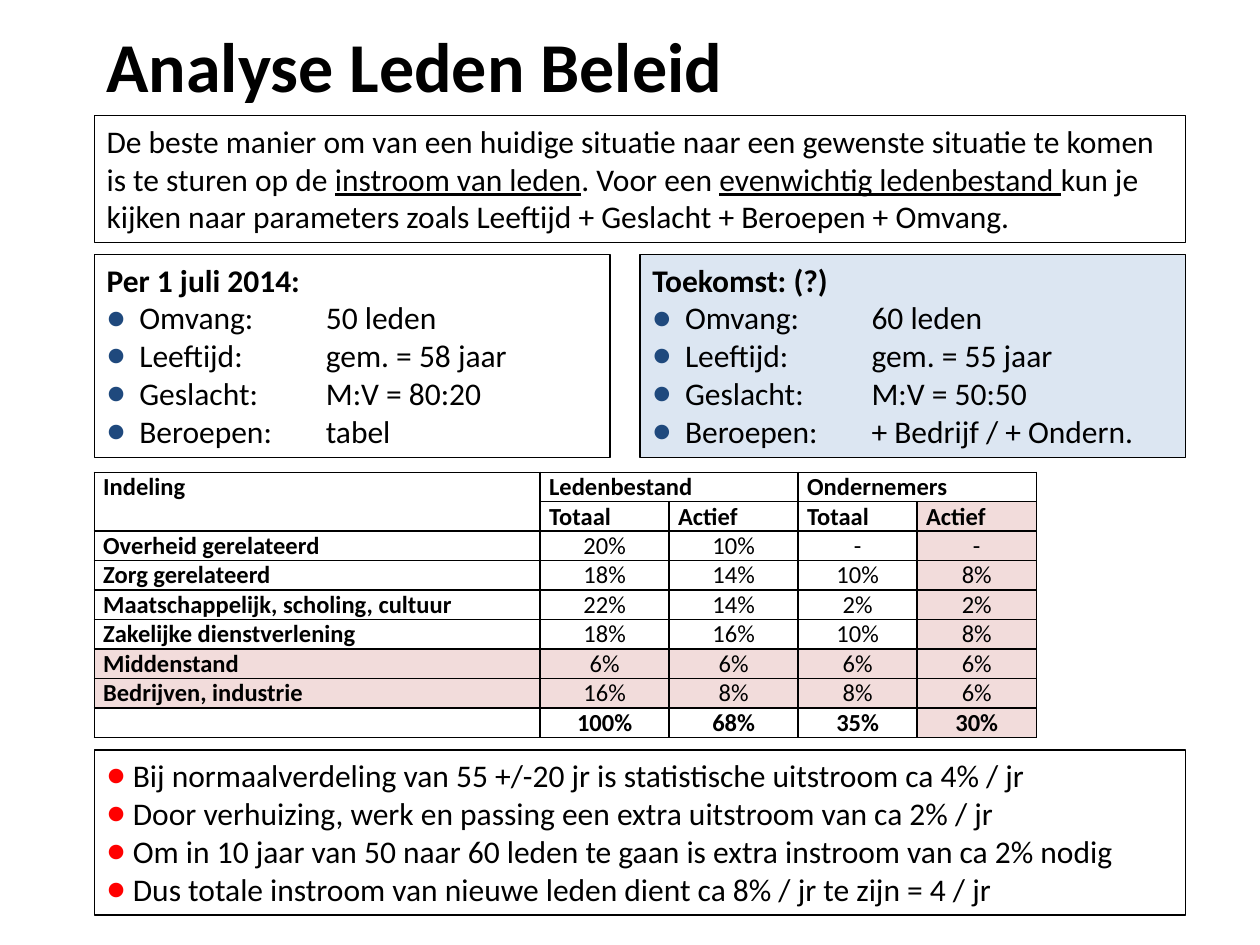
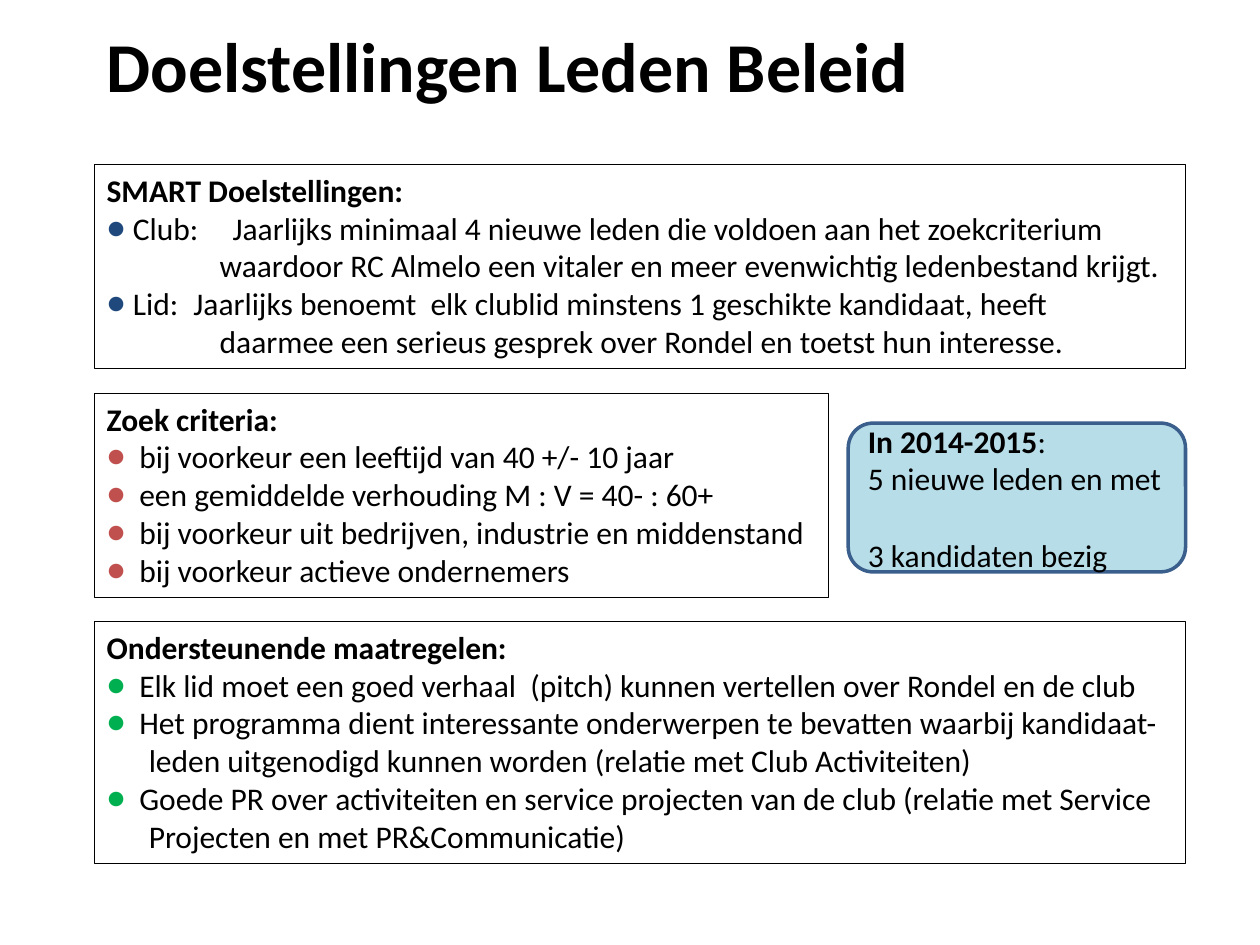
from dataclasses import dataclass
from lxml.etree import SubElement as Sub
from pptx import Presentation
from pptx.dml.color import RGBColor as Rgb
from pptx.enum.shapes import MSO_SHAPE as Form
from pptx.enum.text import MSO_ANCHOR as Anchor, PP_ALIGN as Align
from pptx.oxml.ns import qn
from pptx.util import Cm, Pt


@dataclass(frozen=True)
class Theme:
    """Colours, type sizes and shared measures in centimetres."""
    font: str = "Calibri"
    ink: str = "000000"
    navy: str = "1F497D"
    red: str = "FF0000"
    brick: str = "C0504D"
    green: str = "00B050"
    sky: str = "DCE6F2"
    aqua: str = "B7DEE8"
    edge: str = "3A5F8C"
    rose: str = "F2DCDB"
    title: int = 40
    body: int = 18
    cell: int = 14
    left: float = 1.9
    wide: float = 22
    near: float = 0.53
    far: float = 0.66


@dataclass
class Line:
    """One paragraph: (text, style) runs, bullet colour, indent, tab and space before."""
    runs: list
    tint: str = ""
    pad: float = 0
    tab: float = 0
    gap: float = 0


T = Theme()


def head(text):
    """Return a bold heading line."""
    return Line([(text, "b")])


def dots(texts, tint, pad, tab=0):
    """Return bulleted lines of one colour and indent."""
    return [Line([(text, "")], tint, pad, tab) for text in texts]


def more(text, pad):
    """Return an indented line that carries on a bullet."""
    return Line([(text, "")], pad=pad)


def add_run(para, text, style="", size=T.body):
    """Add a run; style holds b for bold and u for underline."""
    run = para.add_run()
    run.text = text
    font = run.font
    font.name, font.size = T.font, Pt(size)
    font.bold, font.underline = "b" in style, "u" in style
    font.color.rgb = Rgb.from_string(T.ink)


def shape_para(para, line):
    """Set the indent, bullet and tab stop of a paragraph."""
    props = para._p.get_or_add_pPr()
    props.set("marL", str(Cm(line.pad)))
    props.set("indent", str(-Cm(line.pad) if line.tint else 0))
    if line.tint:
        Sub(Sub(props, qn("a:buClr")), qn("a:srgbClr"), val=line.tint)
        Sub(props, qn("a:buFont"), typeface=T.font)
        Sub(props, qn("a:buChar"), char="●")
    if line.tab:
        stops = Sub(props, qn("a:tabLst"))
        Sub(stops, qn("a:tab"), pos=str(Cm(line.tab)), algn="l")


def write(frame, lines, size=T.body):
    """Fill a text frame with lines."""
    frame.word_wrap = True
    for i, line in enumerate(lines):
        para = frame.add_paragraph() if i else frame.paragraphs[0]
        shape_para(para, line)
        para.alignment = Align.LEFT
        if line.gap:
            para.space_before = Pt(line.gap)
        for text, style in line.runs:
            add_run(para, text, style, size)


def add_title(slide, text):
    """Add the slide title."""
    box = slide.shapes.add_textbox(Cm(T.left), Cm(0.33), Cm(T.wide), Cm(1.96))
    write(box.text_frame, [head(text)], T.title)


def add_panel(slide, box, lines, fill=None, form=Form.RECTANGLE,
              edge=T.ink, width=0.75, anchor=Anchor.TOP):
    """Add an outlined text panel in the given box."""
    shape = slide.shapes.add_shape(form, *map(Cm, box))
    shape.shadow.inherit = False
    if fill:
        shape.fill.solid()
        shape.fill.fore_color.rgb = Rgb.from_string(fill)
    else:
        shape.fill.background()
    shape.line.color.rgb = Rgb.from_string(edge)
    shape.line.width = Pt(width)
    shape.text_frame.vertical_anchor = anchor
    write(shape.text_frame, lines)


def add_cell(cell, text, bold, mid, fill):
    """Write, border and fill one table cell."""
    cell.margin_left = cell.margin_right = Cm(0.18)
    cell.margin_top = cell.margin_bottom = 0
    props = cell._tc.get_or_add_tcPr()
    for side in "LRTB":
        rule = Sub(props, qn(f"a:ln{side}"), w=str(Pt(1)))
        Sub(Sub(rule, qn("a:solidFill")), qn("a:srgbClr"), val=T.ink)
    if fill:
        cell.fill.solid()
        cell.fill.fore_color.rgb = Rgb.from_string(fill)
    else:
        cell.fill.background()
    para = cell.text_frame.paragraphs[0]
    para.alignment = Align.CENTER if mid else Align.LEFT
    if text:
        add_run(para, text, "b" if bold else "", T.cell)
    else:
        Sub(para._p, qn("a:endParaRPr"), sz=str(T.cell * 100))


def add_grid(slide, left, top, cols, rows):
    """Add the member table with its merged two-row heading."""
    high = 0.59
    frame = slide.shapes.add_table(len(rows), len(cols), Cm(left), Cm(top),
                                   Cm(sum(cols)), Cm(high * len(rows)))
    grid = frame.table
    for col, wide in zip(grid.columns, cols):
        col.width = Cm(wide)
    for r, row in enumerate(rows):
        grid.rows[r].height = Cm(high)
        for c, text in enumerate(row):
            bold = r < 2 or c == 0 or r == len(rows) - 1
            rose = r in (6, 7) or (c == 4 and r > 0)
            add_cell(grid.cell(r, c), text, bold, r > 1 and c > 0, T.rose if rose else None)
    for start, end in (((0, 0), (1, 0)), ((0, 1), (0, 2)), ((0, 3), (0, 4))):
        grid.cell(*start).merge(grid.cell(*end))


def state(name, values):
    """Return the lines that describe the club at one moment."""
    labels = ("Omvang", "Leeftijd", "Geslacht", "Beroepen")
    texts = [f"{label}:\t{value}" for label, value in zip(labels, values)]
    return [head(name)] + dots(texts, T.navy, T.far, 5.08 - T.far)


def add_study(slide):
    """Build the analysis slide."""
    add_title(slide, "Analyse Leden Beleid")
    add_panel(slide, (T.left, 2.33, T.wide, 2.56), [Line([
        ("De beste manier om van een huidige situatie naar een gewenste situatie "
         "te komen is te sturen op de ", ""),
        ("instroom van leden", "u"),
        (". Voor een ", ""),
        ("evenwichtig ledenbestand ", "u"),
        ("kun je kijken naar parameters zoals Leeftijd + Geslacht + Beroepen + Omvang.", ""),
    ])])
    add_panel(slide, (T.left, 5.13, 10.4, 4.1), state(
        "Per 1 juli 2014:", ("50 leden", "gem. = 58 jaar", "M:V = 80:20", "tabel")))
    add_panel(slide, (12.9, 5.13, 11, 4.1), state(
        "Toekomst: (?)",
        ("60 leden", "gem. = 55 jaar", "M:V = 50:50", "+ Bedrijf / + Ondern.")), T.sky)
    add_grid(slide, T.left, 9.52, (8.99, 2.6, 2.6, 2.4, 2.4), (
        ("Indeling", "Ledenbestand", "", "Ondernemers", ""),
        ("", "Totaal", "Actief", "Totaal", "Actief"),
        ("Overheid gerelateerd", "20%", "10%", "-", "-"),
        ("Zorg gerelateerd", "18%", "14%", "10%", "8%"),
        ("Maatschappelijk, scholing, cultuur", "22%", "14%", "2%", "2%"),
        ("Zakelijke dienstverlening", "18%", "16%", "10%", "8%"),
        ("Middenstand", "6%", "6%", "6%", "6%"),
        ("Bedrijven, industrie", "16%", "8%", "8%", "6%"),
        ("", "100%", "68%", "35%", "30%"),
    ))
    add_panel(slide, (T.left, 15.12, T.wide, 3.33), dots((
        "Bij normaalverdeling van 55 +/-20 jr is statistische uitstroom ca 4% / jr",
        "Door verhuizing, werk en passing een extra uitstroom van ca 2% / jr",
        "Om in 10 jaar van 50 naar 60 leden te gaan is extra instroom van ca 2% nodig",
        "Dus totale instroom van nieuwe leden dient ca 8% / jr te zijn = 4 / jr",
    ), T.red, T.near))


def add_goals(slide):
    """Build the objectives slide."""
    add_title(slide, "Doelstellingen Leden Beleid")
    hang, tuck = 2.28, 0.85
    club, member = dots((
        "Club:\tJaarlijks minimaal 4 nieuwe leden die voldoen aan het zoekcriterium",
        "Lid:\tJaarlijks benoemt  elk clublid minstens 1 geschikte kandidaat, heeft",
    ), T.navy, T.near, hang - T.near)
    add_panel(slide, (T.left, 3.32, T.wide, 4.11), [
        head("SMART Doelstellingen:"),
        club,
        more("waardoor RC Almelo een vitaler en meer evenwichtig ledenbestand krijgt.", hang),
        member,
        more("daarmee een serieus gesprek over Rondel en toetst hun interesse.", hang),
    ])
    add_panel(slide, (T.left, 7.93, 14.8, 4.11), [head("Zoek criteria:")] + dots((
        "bij voorkeur een leeftijd van 40 +/- 10 jaar",
        "een gemiddelde verhouding M : V = 40- : 60+",
        "bij voorkeur uit bedrijven, industrie en middenstand",
        "bij voorkeur actieve ondernemers",
    ), T.brick, T.far))
    add_panel(slide, (17.1, 8.53, 6.8, 3), [
        Line([("In 2014-2015", "b"), (":", "")]),
        Line([("5 nieuwe leden en met", "")]),
        Line([("3 kandidaten bezig", "")], gap=22),
    ], T.aqua, Form.ROUNDED_RECTANGLE, T.edge, 2, Anchor.MIDDLE)
    pitch, themes, press = dots((
        "Elk lid moet een goed verhaal  (pitch) kunnen vertellen over Rondel en de club",
        "Het programma dient interessante onderwerpen te bevatten waarbij kandidaat-",
        "Goede PR over activiteiten en service projecten van de club (relatie met Service",
    ), T.green, T.far)
    add_panel(slide, (T.left, 12.53, T.wide, 4.88), [
        head("Ondersteunende maatregelen:"),
        pitch,
        themes,
        more("leden uitgenodigd kunnen worden (relatie met Club Activiteiten)", tuck),
        press,
        more("Projecten en met PR&Communicatie)", tuck),
    ])


def main():
    """Build and save the deck."""
    deck = Presentation()
    deck.slide_width, deck.slide_height = Cm(25.4), Cm(19.05)
    for build in (add_study, add_goals):
        build(deck.slides.add_slide(deck.slide_layouts[6]))
    deck.save("out.pptx")


if __name__ == "__main__":
    main()
